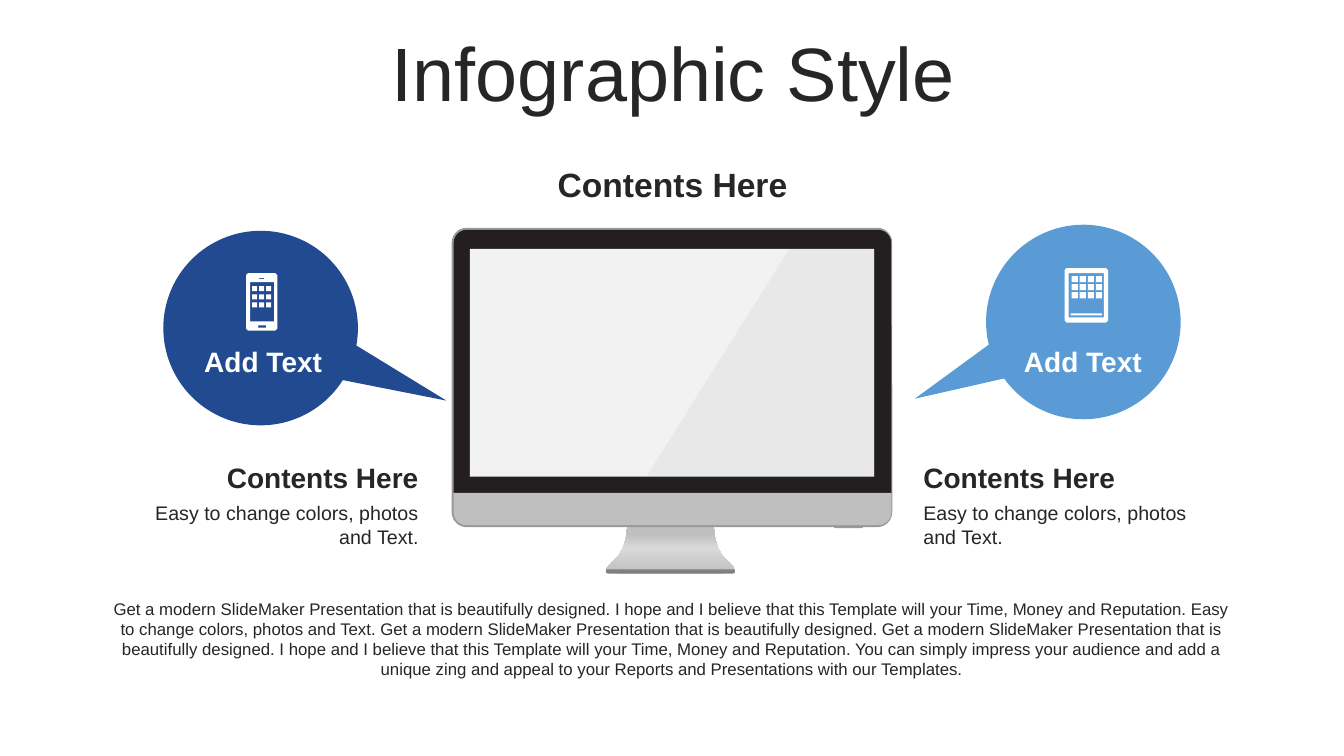
"""Build the Infographic Style slide: a desktop monitor between two callouts."""
from copy import deepcopy

from lxml import etree
from pptx import Presentation
from pptx.dml.color import RGBColor
from pptx.enum.shapes import MSO_SHAPE
from pptx.enum.text import MSO_ANCHOR, PP_ALIGN
from pptx.oxml.ns import qn
from pptx.util import Inches, Pt

RECT = MSO_SHAPE.RECTANGLE
ROUND = MSO_SHAPE.ROUNDED_RECTANGLE
ENDS = MSO_SHAPE.ROUND_2_SAME_RECTANGLE
BUBBLE = MSO_SHAPE.OVAL_CALLOUT
LEFT, MID, RIGHT = PP_ALIGN.LEFT, PP_ALIGN.CENTER, PP_ALIGN.RIGHT

WHITE = RGBColor(0xFF, 0xFF, 0xFF)
INK = RGBColor(0x26, 0x26, 0x26)
NAVY = RGBColor(0x22, 0x4A, 0x90)
SKY = RGBColor(0x5A, 0x9B, 0xD5)
BLACK = RGBColor(0x23, 0x1F, 0x20)
EDGE = RGBColor(0x99, 0x99, 0x99)
STEEL = RGBColor(0xBF, 0xBF, 0xBF)
SHINE = RGBColor(0xD9, 0xD9, 0xD9)
DARK = RGBColor(0x80, 0x80, 0x80)
PALE = RGBColor(0xF2, 0xF2, 0xF2)

HEAD = "Contents Here"
NOTE = "Easy to change colors, photos and Text."
DECK = "Get a modern SlideMaker Presentation that is beautifully designed. "
HOPE = ("I hope and I believe that this Template will your Time, "
        "Money and Reputation. ")
BODY = (DECK + HOPE + "Easy to change colors, photos and Text. " + DECK + DECK
        + HOPE + "You can simply impress your audience and add a unique zing "
        "and appeal to your Reports and Presentations with our Templates.")

TEXTS = [
    ("Add Text", (1.8, 3.37, 1.62, 0.44), 20, True, WHITE, MID),
    (HEAD, (1.39, 4.52, 2.86, 0.44), 20, True, INK, RIGHT),
    (NOTE, (1.39, 4.92, 2.86, 0.57), 14, False, INK, RIGHT),
    (HEAD, (9.06, 4.52, 2.88, 0.44), 20, True, INK, LEFT),
    (NOTE, (9.06, 4.92, 2.88, 0.57), 14, False, INK, LEFT),
    ("Add Text", (9.93, 3.37, 1.62, 0.44), 20, True, WHITE, MID),
    (HEAD, (5.11, 1.58, 3.12, 0.5), 24, True, INK, MID),
    (BODY, (0.95, 5.89, 11.43, 0.91), 12, False, INK, MID),
]
SCREEN = [
    (ROUND, (4.48, 2.26, 4.37, 2.97), EDGE, (0.05,)),
    (ENDS, (8.27, 5.21, 0.29, 0.03), EDGE, (0, 0.5)),
    (ENDS, (4.5, 2.28, 4.34, 2.61), BLACK, (0.05, 0)),
    (ENDS, (6.01, 5.65, 1.28, 0.04), DARK, (0, 0.5)),
    (ENDS, (4.5, 4.89, 4.34, 0.32), STEEL, (0, 0.4)),
    (RECT, (4.66, 2.47, 4.01, 2.26), PALE, ()),
]
BUBBLES = [
    ((9.78, 2.23, 1.93, 1.93), SKY, (-0.534, 0.788)),
    ((1.62, 2.29, 1.93, 1.93), NAVY, (1.009, -0.179)),
]
TURN = 31.4
GLARE = [(7.83, 2.47), (8.68, 2.47), (8.68, 4.73), (6.41, 4.73)]
AXIS = 6.65
CURVES = [
    [(6.22, 5.22), (6.22, 5.22), (6.22, 5.42), (6.13, 5.52)],
    [(6.13, 5.52), (6.04, 5.61), (5.9, 5.69), (6.15, 5.69)],
]
STOPS = [(0, STEEL), (53, SHINE), (83, STEEL), (100, STEEL)]
DEVICES = [
    ([(10.56, 2.66, 0.43, 0.54, 0.02), (10.6, 2.71, 0.35, 0.44, 0),
      (10.62, 3.11, 0.31, 0.02, 0)],
     (10.63, 2.74), 4, 0.08, 0.06),
    ([(2.44, 2.71, 0.31, 0.57, 0.02), (2.48, 2.8, 0.24, 0.39, 0),
      (2.57, 2.76, 0.05, 0.01, 0), (2.56, 3.23, 0.08, 0.02, 0)],
     (2.5, 2.84), 3, 0.07, 0.05),
]
ROWS, DROP = 3, 0.08

deck = Presentation()
deck.slide_width, deck.slide_height = Inches(13.33), Inches(7.5)
slide = deck.slides.add_slide(deck.slide_layouts[6])
shapes = slide.shapes


def paint(shape, color):
    shape.shadow.inherit = False
    shape.line.fill.background()
    shape.fill.solid()
    shape.fill.fore_color.rgb = color
    return shape


def block(kind, box, color, adjust=()):
    shape = shapes.add_shape(kind, *map(Inches, box))
    for i, value in enumerate(adjust):
        shape.adjustments[i] = value
    return paint(shape, color)


def outline(loops, color):
    form = None
    for loop in loops:
        spots = [(Inches(x), Inches(y)) for x, y in loop]
        if form is None:
            form = shapes.build_freeform(*spots[0], scale=1.0)
        else:
            form.move_to(*spots[0])
        form.add_line_segments(spots[1:], close=True)
    return paint(form.convert_to_shape(), color)


def frame(x, y, wide, high, cut):
    far, low = x + wide, y + high
    if not cut:
        return [(x, y), (far, y), (far, low), (x, low)]
    return [(x + cut, y), (far - cut, y), (far, y + cut), (far, low - cut),
            (far - cut, low), (x + cut, low), (x, low - cut), (x, y + cut)]


def bend(curve, steps=4):
    for n in range(steps + 1):
        t = n / steps
        parts = ((1 - t) ** 3, 3 * t * (1 - t) ** 2, 3 * t * t * (1 - t), t ** 3)
        yield tuple(sum(k * p[axis] for k, p in zip(parts, curve))
                    for axis in (0, 1))


def write(text, box, size, bold, color, align):
    area = shapes.add_textbox(*map(Inches, box)).text_frame
    area.word_wrap = True
    para = area.paragraphs[0]
    para.alignment = align
    run = para.add_run()
    run.text = text
    font = run.font
    font.name, font.size, font.bold = "Arial", Pt(size), bold
    font.color.rgb = color
    return area


def shade(shape):
    shape.fill.gradient()
    shape.fill.gradient_angle = 90
    stops = shape._element.spPr.find(qn("a:gradFill")).find(qn("a:gsLst"))
    model = deepcopy(stops[0])
    for old in list(stops):
        stops.remove(old)
    for place, color in STOPS:
        stop = deepcopy(model)
        stop.set("pos", str(place * 1000))
        for old in list(stop):
            stop.remove(old)
        etree.SubElement(stop, qn("a:srgbClr"), val=str(color))
        stops.append(stop)


side = [spot for curve in CURVES for spot in bend(curve)]
stand = outline([side + [(2 * AXIS - x, y) for x, y in reversed(side)]], STEEL)
shade(stand)
for part in SCREEN:
    block(*part)
glare = outline([GLARE], EDGE)
tint = glare._element.spPr.find(qn("a:solidFill"))[0]
etree.SubElement(tint, qn("a:alpha"), val="10000")

for box, color, tip in BUBBLES:
    block(BUBBLE, box, color, tip).rotation = TURN
for item in TEXTS:
    write(*item)
for parts, (left, top), cols, pitch, size in DEVICES:
    keys = [(left + col * pitch, top + row * DROP, size, size, 0)
            for row in range(ROWS) for col in range(cols)]
    outline([frame(*part) for part in parts + keys], WHITE)

title = write("Infographic Style", (0.35, 0.37, 12.66, 0.79), 54, False, INK, MID)
title.vertical_anchor = MSO_ANCHOR.MIDDLE
title.paragraphs[0].line_spacing = 0.9

deck.save("out.pptx")
